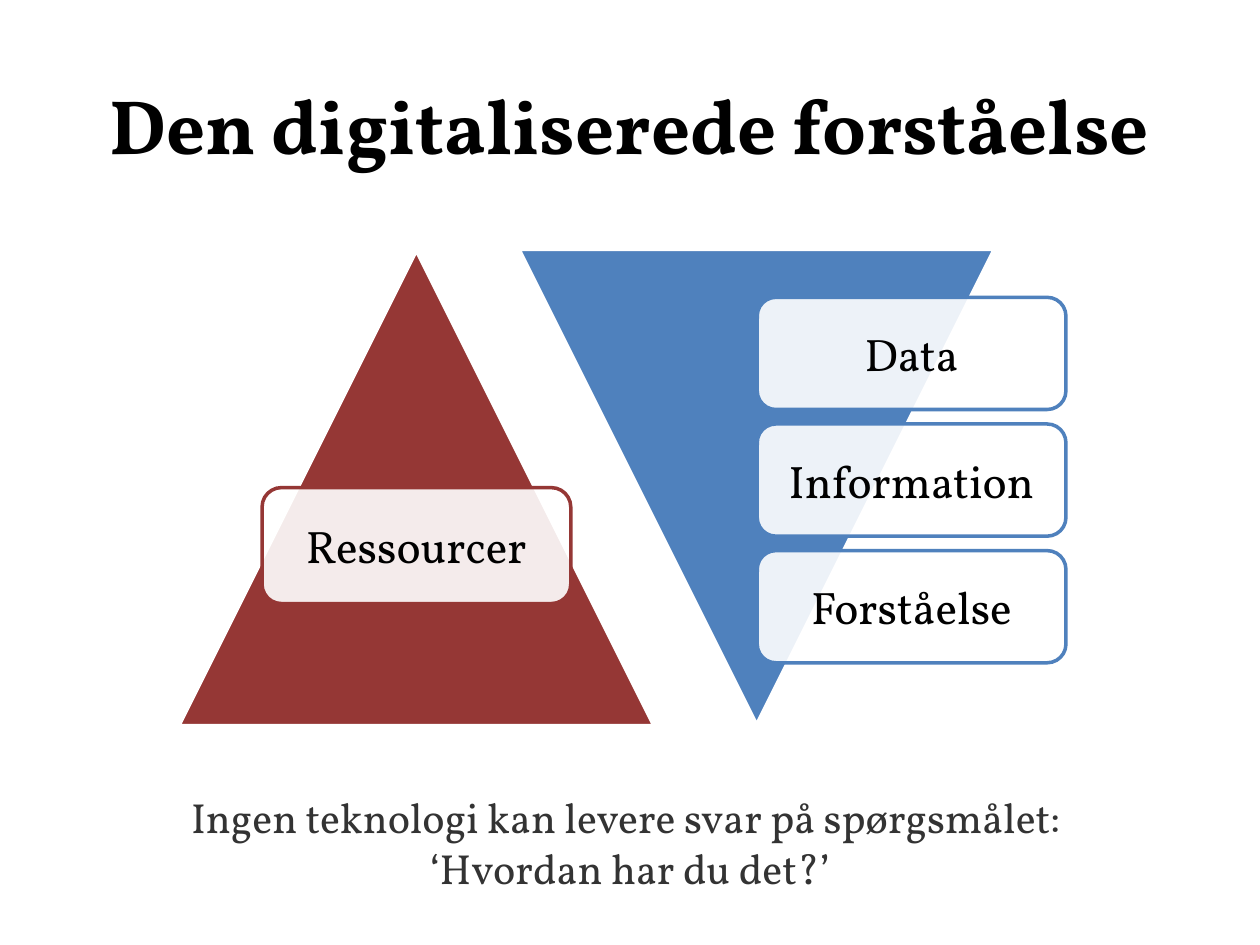
import pptx
import pptx.util
import pptx.oxml
import pptx.oxml.ns
import pptx.dml.color
import pptx.enum.shapes
import pptx.enum.text
import lxml.etree

THEME = {
    "font": "Vollkorn",
    "blue": "4F81BD", "red": "953735", "white": "FFFFFF",
    "title": {"size": 44, "bold": True, "color": "000000"},
    "label": {"size": 26, "bold": False, "color": "000000"},
    "closing": {"size": 24, "bold": False, "color": "333333"},
}
SHAPE = pptx.enum.shapes.MSO_SHAPE
RGB = pptx.dml.color.RGBColor.from_string

deck = pptx.Presentation()
deck.slide_width = pptx.util.Inches(10)
deck.slide_height = pptx.util.Inches(7.5)
slide = deck.slides.add_slide(deck.slide_layouts[6])

# Grid of 100 columns by 75 rows, square cells
CELL = deck.slide_width / 100


def write(holder, lines, role, inset=None):
    frame = holder.text_frame
    layout = {"word_wrap": True,
              "vertical_anchor": pptx.enum.text.MSO_ANCHOR.MIDDLE}
    if inset is not None:
        layout.update({f"margin_{side}": round(inset * CELL)
                       for side in ("left", "top", "right", "bottom")})
    for name, value in layout.items():
        setattr(frame, name, value)
    look = THEME[role]
    font_format = {"name": THEME["font"], "bold": look["bold"],
                   "size": pptx.util.Pt(look["size"])}
    for index, line in enumerate(lines):
        paragraph = frame.paragraphs[0] if index == 0 else frame.add_paragraph()
        paragraph.alignment = pptx.enum.text.PP_ALIGN.CENTER
        run = paragraph.add_run()
        run.text = line
        for name, value in font_format.items():
            setattr(run.font, name, value)
        run.font.color.rgb = RGB(look["color"])


def draw(group, preset, cells, fill, line):
    shape = group.shapes.add_shape(preset, *(round(n * CELL) for n in cells))
    shape.shadow.inherit = False
    shape.fill.solid()
    shape.fill.fore_color.rgb = RGB(THEME[fill])
    shape.line.color.rgb = RGB(THEME[line])
    shape.line.width = pptx.util.Pt(2)
    return shape


# Title and closing statement
for cells, lines, role in [
    ((5, 3.6, 90, 12.5), ["Den digitaliserede forståelse"], "title"),
    ((0, 60.6, 100, 12.5), ["Ingen teknologi kan levere svar på spørgsmålet: ",
                            "‘Hvordan har du det?’"], "closing"),
]:
    statement = slide.shapes.add_textbox(*(round(n * CELL) for n in cells))
    write(statement, lines, role)

# Two opposed pyramids, each with a column of labels
SIDE, LABEL_WIDTH, LABEL_PITCH = 37.7, 24.5, 10.05
pyramids = [
    {"color": "blue", "left": 41.2, "top": 19.8, "turn": 180,
     "label_left": 60.1, "label_top": 23.6, "label_height": 8.9,
     "labels": ["Data", "Information", "Forståelse"]},
    {"color": "red", "left": 14.2, "top": 19.9, "turn": 0,
     "label_left": 20.8, "label_top": 38.7, "label_height": 9.2,
     "labels": ["Ressourcer"]},
]
for pyramid in pyramids:
    group = slide.shapes.add_group_shape()
    triangle = draw(group, SHAPE.ISOSCELES_TRIANGLE,
                    (pyramid["left"], pyramid["top"], SIDE, SIDE),
                    pyramid["color"], "white")
    triangle.rotation = pyramid["turn"]
    for row, wording in enumerate(pyramid["labels"]):
        label = draw(group, SHAPE.ROUNDED_RECTANGLE,
                     (pyramid["label_left"],
                      pyramid["label_top"] + row * LABEL_PITCH,
                      LABEL_WIDTH, pyramid["label_height"]),
                     "white", pyramid["color"])
        # Let the pyramid show faintly through the label
        tint = label.fill._xPr.find(".//" + pptx.oxml.ns.qn("a:srgbClr"))
        lxml.etree.SubElement(tint, pptx.oxml.ns.qn("a:alpha"), val="90000")
        write(label, [wording], "label", inset=1.1)

deck.save("out.pptx")
